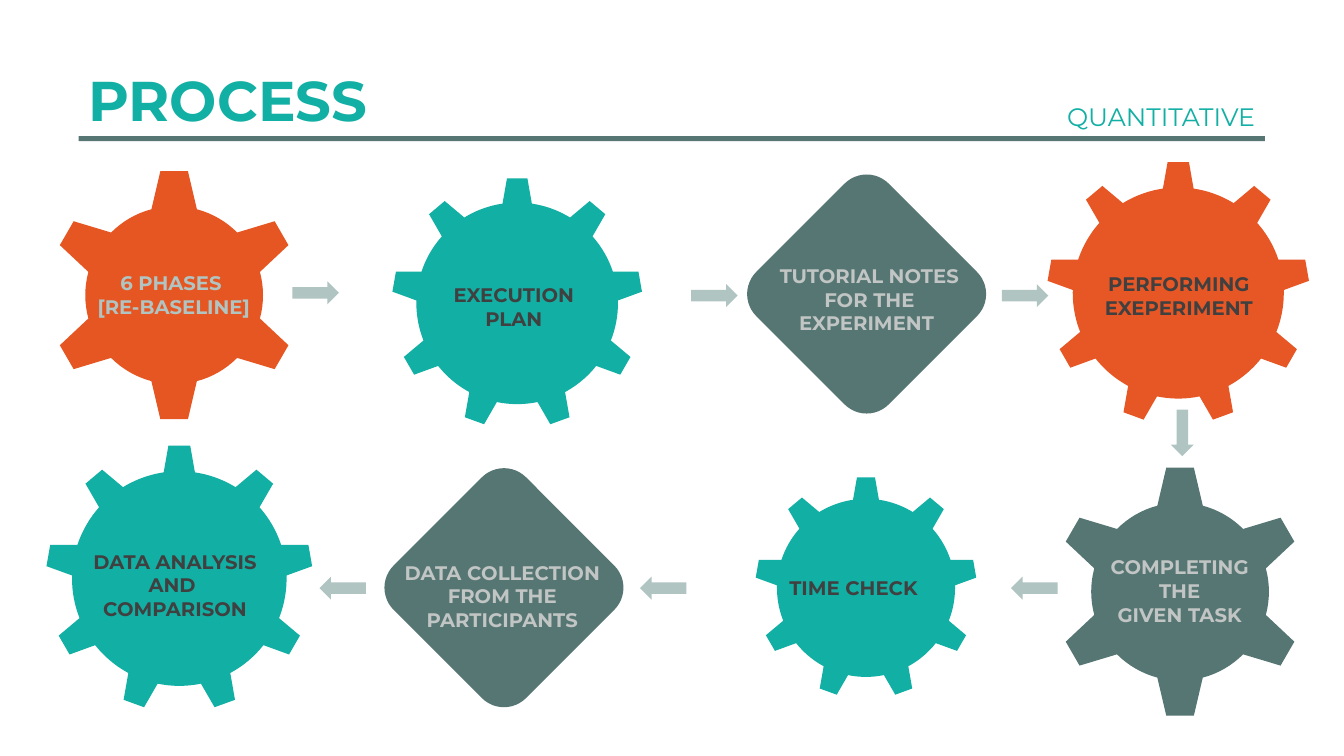
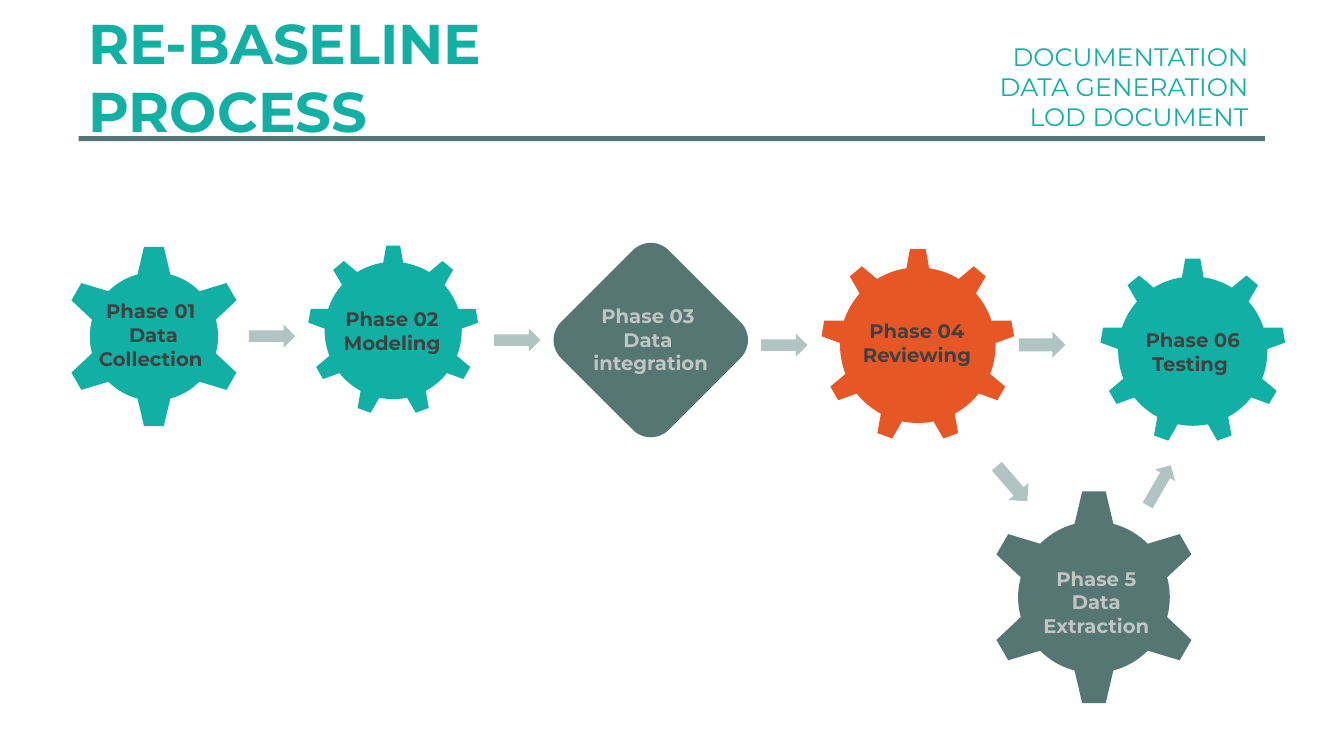
from pptx import Presentation
from pptx.dml.color import RGBColor
from pptx.enum.shapes import MSO_SHAPE
from pptx.enum.text import MSO_AUTO_SIZE, PP_ALIGN
from pptx.util import Cm, Pt

GEAR_6, GEAR_9 = MSO_SHAPE.GEAR_6, MSO_SHAPE.GEAR_9
DIAMOND, ARROW, BAR = MSO_SHAPE.ROUNDED_RECTANGLE, MSO_SHAPE.RIGHT_ARROW, MSO_SHAPE.RECTANGLE
LEFT, CENTER, RIGHT = PP_ALIGN.LEFT, PP_ALIGN.CENTER, PP_ALIGN.RIGHT

FONT = "Montserrat"
COLORS = {
    "teal": "12AFA4",
    "slate": "567673",
    "orange": "E75726",
    "ember": "E65622",
    "mist": "B0C4C2",
    "silver": "C1C5C4",
    "charcoal": "404040",
}
LABEL_WIDTH = 5.92
ARROW_LENGTH = 1.17

# Each slide: title and subtitle (box, paragraphs), then steps and arrows, in cm
# Step: outline, (left, top, size), fill, label (left, top, height), ink, paragraphs
# Arrow: left, top, thickness, rotation
SLIDES = [
    {
        "title": ((1.98, 1.52, 29.9, 1.96), ["PROCESS"]),
        "subtitle": ((21.62, 2.44, 10.26, 1.02), ["QUANTITATIVE"]),
        "steps": [
            (GEAR_6, (1.19, 4.24, 6.4), "ember", (1.42, 6.71, 1.45), "mist",
             ["6 PHASES ", "[RE-BASELINE]"]),
            (GEAR_9, (9.86, 4.47, 6.35), "teal", (10.06, 7.01, 1.45), "charcoal",
             ["EXECUTION ", "PLAN "]),
            (DIAMOND, (19.48, 5.05, 4.72), "slate", (18.95, 6.53, 2.06), "silver",
             ["TUTORIAL NOTES FOR THE EXPERIMENT "]),
            (GEAR_9, (26.37, 4.06, 6.65), "orange", (26.75, 6.73, 1.45), "charcoal",
             ["PERFORMING EXEPERIMENT"]),
            (GEAR_6, (26.54, 11.71, 6.4), "slate", (26.77, 13.87, 2.06), "silver",
             ["COMPLETING", " THE ", "GIVEN TASK"]),
            (GEAR_9, (19.02, 12.01, 5.61), "teal", (18.62, 14.38, 0.86), "charcoal",
             ["TIME CHECK "]),
            (DIAMOND, (10.34, 12.45, 4.72), "slate", (9.7, 14, 2.06), "silver",
             ["DATA COLLECTION FROM THE PARTICIPANTS"]),
            (GEAR_9, (1.14, 11.2, 6.76), "teal", (1.45, 13.72, 2.06), "charcoal",
             ["DATA ANALYSIS AND ", "COMPARISON"]),
        ],
        "arrows": [
            (7.37, 7.09, 0.58, 0), (17.42, 7.16, 0.58, 0), (25.25, 7.16, 0.58, 0),
            (29.21, 10.62, 0.58, 90),
            (25.48, 14.53, 0.58, 180), (16.13, 14.53, 0.58, 180), (8.05, 14.53, 0.58, 180),
        ],
    },
    {
        "title": ((1.98, 0.1, 15.06, 3.68), ["RE-BASELINE", "PROCESS"]),
        "subtitle": ((21.62, 0.91, 10.26, 2.57),
                     ["DOCUMENTATION ", "DATA GENERATION ", "LOD DOCUMENT "]),
        "steps": [
            (GEAR_6, (1.57, 6.17, 4.62), "teal", (0.91, 7.42, 2.06), "charcoal",
             ["Phase 01 ", "Data", "Collection "]),
            (GEAR_9, (7.75, 6.17, 4.32), "teal", (6.99, 7.62, 1.45), "charcoal",
             ["Phase 02 ", "Modeling "]),
            (DIAMOND, (14.48, 6.65, 3.84), "slate", (13.44, 7.54, 2.06), "silver",
             ["Phase 03 ", "Data ", "integration"]),
            (GEAR_9, (20.68, 6.25, 4.9), "orange", (20.22, 7.92, 1.45), "charcoal",
             ["Phase 04 ", "Reviewing "]),
            (GEAR_6, (24.84, 12.32, 5.46), "slate", (24.74, 14.15, 2.06), "silver",
             ["Phase 5 ", "Data ", "Extraction "]),
            (GEAR_9, (27.71, 6.5, 4.7), "teal", (27.1, 8.15, 1.45), "charcoal",
             ["Phase 06", "Testing "]),
        ],
        "arrows": [
            (6.27, 8.18, 0.58, 0), (12.45, 8.28, 0.58, 0), (19.18, 8.41, 0.58, 0),
            (25.68, 8.36, 0.66, 0), (24.92, 11.86, 0.66, 49.1), (28.63, 11.94, 0.58, 300),
        ],
    },
]


def add_block(slide, outline, box, color, rotation=0):
    block = slide.shapes.add_shape(outline, *[Cm(length) for length in box])
    block.rotation = rotation
    block.shadow.inherit = False
    block.fill.solid()
    block.fill.fore_color.rgb = RGBColor.from_string(COLORS[color])
    block.line.fill.background()


def add_text(slide, box, paragraphs, size, color, align, bold):
    frame = slide.shapes.add_textbox(*[Cm(length) for length in box]).text_frame
    frame.word_wrap = True
    frame.auto_size = MSO_AUTO_SIZE.SHAPE_TO_FIT_TEXT
    for index, text in enumerate(paragraphs):
        paragraph = frame.add_paragraph() if index else frame.paragraphs[0]
        paragraph.alignment = align
        run = paragraph.add_run()
        run.text = text
        run.font.name = FONT
        run.font.size = Pt(size)
        run.font.bold = bold
        run.font.color.rgb = RGBColor.from_string(COLORS[color])


presentation = Presentation()
presentation.slide_width = Cm(33.87)
presentation.slide_height = Cm(19.05)
blank_layout = presentation.slide_layouts[6]

for content in SLIDES:
    slide = presentation.slides.add_slide(blank_layout)

    # Header: rule, title and subtitle
    add_block(slide, BAR, (1.98, 3.43, 29.9, 0.13), "slate")
    add_text(slide, *content["title"], 40, "teal", LEFT, True)
    add_text(slide, *content["subtitle"], 18, "teal", RIGHT, False)

    # Process steps with their labels
    for outline, (left, top, size), fill, label, ink, paragraphs in content["steps"]:
        rotation = 45 if outline == DIAMOND else 0
        add_block(slide, outline, (left, top, size, size), fill, rotation)
        label_left, label_top, label_height = label
        label_box = (label_left, label_top, LABEL_WIDTH, label_height)
        add_text(slide, label_box, paragraphs, 14, ink, CENTER, True)

    # Arrows between the steps
    for left, top, thickness, rotation in content["arrows"]:
        add_block(slide, ARROW, (left, top, ARROW_LENGTH, thickness), "mist", rotation)

presentation.save("out.pptx")
